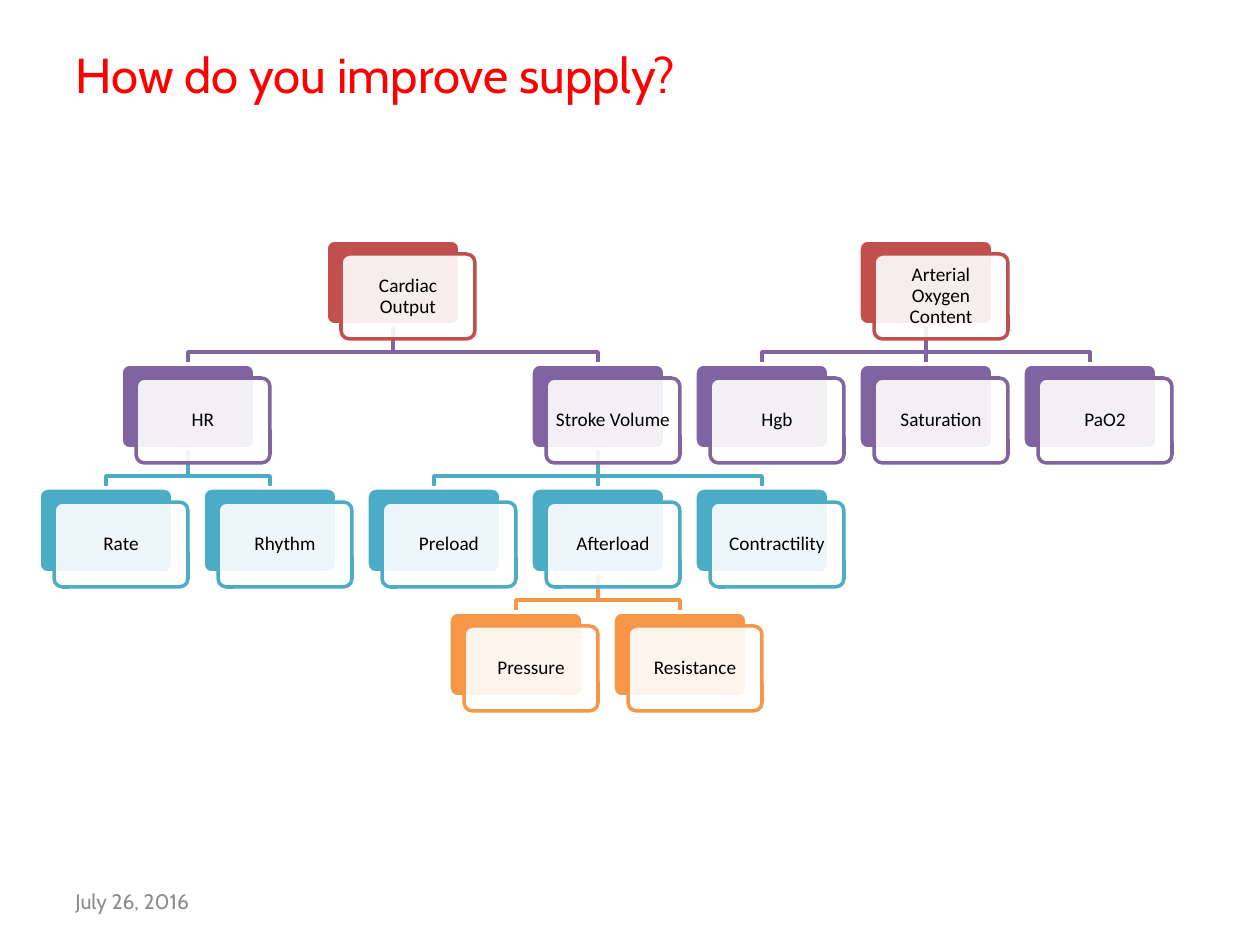
from dataclasses import dataclass

from lxml import etree
from pptx import Presentation
from pptx.dml.color import RGBColor
from pptx.enum.shapes import MSO_CONNECTOR, MSO_SHAPE
from pptx.enum.text import MSO_ANCHOR, PP_ALIGN
from pptx.oxml.ns import qn
from pptx.shapes.autoshape import Shape
from pptx.slide import Slide
from pptx.text.text import TextFrame
from pptx.util import Emu, Pt

ROUNDED = MSO_SHAPE.ROUNDED_RECTANGLE
STRAIGHT = MSO_CONNECTOR.STRAIGHT
TOP, MIDDLE = MSO_ANCHOR.TOP, MSO_ANCHOR.MIDDLE
LEFT, CENTER = PP_ALIGN.LEFT, PP_ALIGN.CENTER
SITE_TOP, SITE_BOTTOM = 0, 2

EMU_PER_PX = 914400 / 126
SLIDE_WIDTH, SLIDE_HEIGHT = 1260, 945
TITLE_ONLY = 5

# Cards sit on a grid of quarter columns and full rows.
CHART_LEFT, CHART_TOP = 39, 240
QUARTER_COLUMN, ROW = 41, 124
CARD_WIDTH, CARD_HEIGHT = 134, 85
FRONT_DX, FRONT_DY = 15, 14
CARD_INSET = 6
ELBOW_RISE = 12
BEHIND_ALL = 2


@dataclass(frozen=True)
class TextStyle:
    font: str
    size: float
    color: str


@dataclass(frozen=True)
class Theme:
    title: TextStyle = TextStyle("Cabin", 28, "FF0000")
    date: TextStyle = TextStyle("Cabin", 12, "8C8C8C")
    card: TextStyle = TextStyle("Calibri", 11, "000000")
    levels: tuple[str, ...] = ("C0504D", "8064A2", "4BACC6", "F79646")
    paper: str = "FFFFFF"
    front_opacity: int = 90
    line_width: float = 2


@dataclass(frozen=True)
class Factor:
    label: str
    quarter: int
    causes: tuple["Factor", ...] = ()


THEME = Theme()

SUPPLY = (
    Factor("Cardiac Output", 7, (
        Factor("HR", 2, (Factor("Rate", 0), Factor("Rhythm", 4))),
        Factor("Stroke Volume", 12, (
            Factor("Preload", 8),
            Factor("Afterload", 12, (
                Factor("Pressure", 10),
                Factor("Resistance", 14),
            )),
            Factor("Contractility", 16),
        )),
    )),
    Factor("Arterial Oxygen Content", 20, (
        Factor("Hgb", 16),
        Factor("Saturation", 20),
        Factor("PaO2", 24),
    )),
)


def px(length: int) -> Emu:
    return Emu(round(length * EMU_PER_PX))


def rgb(color: str) -> RGBColor:
    return RGBColor.from_string(color)


def write(frame: TextFrame, words: str, style: TextStyle,
          frame_format: dict, paragraph_format: dict) -> None:
    frame.text = words
    paragraph = frame.paragraphs[0]
    font_format = {"name": style.font, "size": Pt(style.size)}
    for target, values in ((frame, frame_format),
                           (paragraph, paragraph_format),
                           (paragraph.font, font_format)):
        for name, value in values.items():
            setattr(target, name, value)
    paragraph.font.color.rgb = rgb(style.color)


def add_panel(slide: Slide, left: int, top: int, fill: str, line: str) -> Shape:
    panel = slide.shapes.add_shape(
        ROUNDED, px(left), px(top), px(CARD_WIDTH), px(CARD_HEIGHT))
    panel.adjustments[0] = 0.1
    panel.shadow.inherit = False
    panel.fill.solid()
    panel.fill.fore_color.rgb = rgb(fill)
    panel.line.color.rgb = rgb(line)
    panel.line.width = Pt(THEME.line_width)
    return panel


def add_card(slide: Slide, factor: Factor, level: int) -> Shape:
    """Draw the coloured panel and the labelled one over it; return the former."""
    left = CHART_LEFT + factor.quarter * QUARTER_COLUMN
    top = CHART_TOP + level * ROW
    color = THEME.levels[level]
    back = add_panel(slide, left, top, color, THEME.paper)
    front = add_panel(slide, left + FRONT_DX, top + FRONT_DY, THEME.paper, color)
    front_color = front._element.spPr.find(qn("a:solidFill"))[0]
    etree.SubElement(front_color, qn("a:alpha"),
                     val=str(THEME.front_opacity * 1000))
    inset = px(CARD_INSET)
    write(front.text_frame, factor.label, THEME.card,
          {"word_wrap": True, "vertical_anchor": MIDDLE,
           "margin_left": inset, "margin_right": inset,
           "margin_top": inset, "margin_bottom": inset},
          {"alignment": CENTER, "line_spacing": 0.9})
    return back


def add_link(slide: Slide, effect: Factor, cause: Factor, effect_card: Shape,
             cause_card: Shape, cause_level: int) -> None:
    """Join two cards behind all others, with an elbow unless aligned."""
    if effect.quarter == cause.quarter:
        link = slide.shapes.add_connector(STRAIGHT, 0, 0, 0, 0)
        link.begin_connect(effect_card, SITE_BOTTOM)
        link.end_connect(cause_card, SITE_TOP)
    else:
        start_x, end_x = (
            CHART_LEFT + factor.quarter * QUARTER_COLUMN + CARD_WIDTH // 2
            for factor in (effect, cause))
        end_y = CHART_TOP + cause_level * ROW
        start_y = end_y - ROW + CARD_HEIGHT
        turn_y = end_y - ELBOW_RISE
        outline = slide.shapes.build_freeform(start_x, start_y, EMU_PER_PX)
        outline.add_line_segments(
            [(start_x, turn_y), (end_x, turn_y), (end_x, end_y)], close=False)
        link = outline.convert_to_shape()
        link.fill.background()
    link.line.color.rgb = rgb(THEME.levels[cause_level])
    link.line.width = Pt(THEME.line_width)
    etree.SubElement(link._element.spPr, qn("a:effectLst"))
    slide.shapes._spTree.insert(BEHIND_ALL, link._element)


def add_branch(slide: Slide, factor: Factor, level: int = 0) -> Shape:
    card = add_card(slide, factor, level)
    for cause in factor.causes:
        cause_card = add_branch(slide, cause, level + 1)
        add_link(slide, factor, cause, card, cause_card, level + 1)
    return card


def main() -> None:
    deck = Presentation()
    deck.slide_width, deck.slide_height = px(SLIDE_WIDTH), px(SLIDE_HEIGHT)
    slide = deck.slides.add_slide(deck.slide_layouts[TITLE_ONLY])

    title = slide.shapes.title
    title.left, title.top, title.width, title.height = map(px, (63, 38, 1134, 157))
    write(title.text_frame, "How do you improve supply?", THEME.title,
          {"vertical_anchor": TOP}, {"alignment": LEFT})

    date = slide.shapes.add_textbox(*map(px, (63, 876, 294, 50)))
    write(date.text_frame, "July 26, 2016", THEME.date,
          {"word_wrap": True, "vertical_anchor": MIDDLE}, {"alignment": LEFT})

    for factor in SUPPLY:
        add_branch(slide, factor)
    deck.save("out.pptx")


if __name__ == "__main__":
    main()
